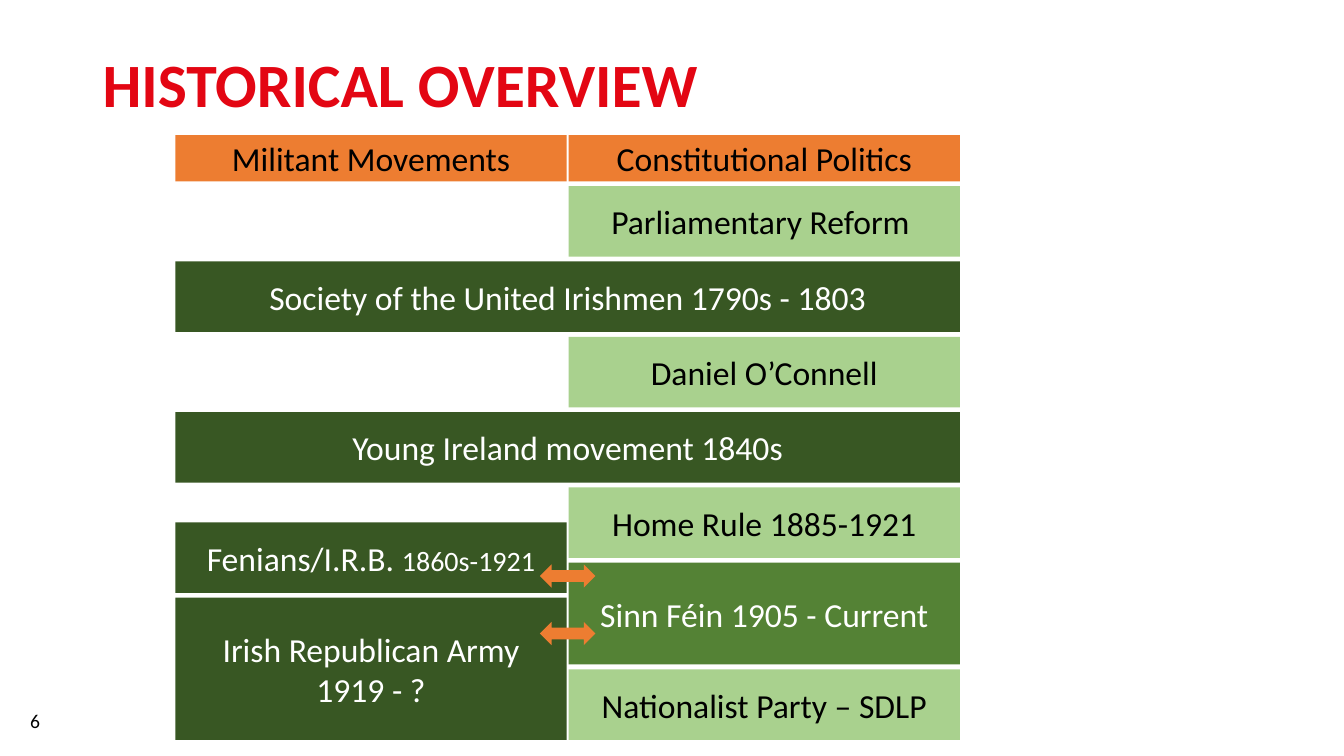
from pptx import Presentation
from pptx.dml.color import RGBColor
from pptx.enum.shapes import MSO_SHAPE
from pptx.enum.text import MSO_ANCHOR, PP_ALIGN
from pptx.util import Inches, Pt

RECTANGLE = MSO_SHAPE.RECTANGLE
DOUBLE_ARROW = MSO_SHAPE.LEFT_RIGHT_ARROW
MIDDLE = MSO_ANCHOR.MIDDLE
CENTER = PP_ALIGN.CENTER

RED = RGBColor(0xE3, 0x06, 0x13)
ORANGE = RGBColor(0xED, 0x7D, 0x31)
LIGHT_GREEN = RGBColor(0xA9, 0xD1, 0x8E)
MID_GREEN = RGBColor(0x54, 0x82, 0x35)
DARK_GREEN = RGBColor(0x38, 0x57, 0x23)
BLACK = RGBColor(0, 0, 0)
WHITE = RGBColor(255, 255, 255)

FONT = "Calibri"
COLUMN_GAP = 0.02
HEADER_HEIGHT = 0.46
BAR_HEIGHT = 0.7
SINN_FEIN_HEIGHT = 1.01
ARMY_HEIGHT = 1.41
ARROW_WIDTH, ARROW_HEIGHT = 0.55, 0.23
ARROW_OFFSETS = (4.26, 4.83)

CONSTITUTIONAL, BOTH = "constitutional", "both"
ROWS = [
    (CONSTITUTIONAL, "Constitutional Politics", HEADER_HEIGHT, ORANGE, BLACK),
    (CONSTITUTIONAL, "Parliamentary Reform ", BAR_HEIGHT, LIGHT_GREEN, BLACK),
    (BOTH, "Society of the United Irishmen 1790s - 1803", BAR_HEIGHT, DARK_GREEN, WHITE),
    (CONSTITUTIONAL, "Daniel O’Connell", BAR_HEIGHT, LIGHT_GREEN, BLACK),
    (BOTH, "Young Ireland movement 1840s", BAR_HEIGHT, DARK_GREEN, WHITE),
    (CONSTITUTIONAL, "Home Rule 1885-1921", BAR_HEIGHT, LIGHT_GREEN, BLACK),
    (CONSTITUTIONAL, "Sinn Féin 1905 - Current", SINN_FEIN_HEIGHT, MID_GREEN, WHITE),
    (CONSTITUTIONAL, "Nationalist Party – SDLP", BAR_HEIGHT, LIGHT_GREEN, BLACK),
]


def style_font(paragraph, size, color, bold=False):
    paragraph.font.name = FONT
    paragraph.font.size = Pt(size)
    paragraph.font.bold = bold
    paragraph.font.color.rgb = color


def add_label(slide, box, text, size, color, bold=False):
    shape = slide.shapes.add_textbox(*map(Inches, box))
    frame = shape.text_frame
    frame.word_wrap = True
    frame.vertical_anchor = MIDDLE
    paragraph = frame.paragraphs[0]
    paragraph.text = text
    style_font(paragraph, size, color, bold)
    return paragraph


def add_filled(slide, kind, box, fill):
    shape = slide.shapes.add_shape(kind, *map(Inches, box))
    shape.shadow.inherit = False
    shape.fill.solid()
    shape.fill.fore_color.rgb = fill
    shape.line.fill.background()
    return shape


def add_bar(slide, box, text, fill, color):
    frame = add_filled(slide, RECTANGLE, box, fill).text_frame
    frame.word_wrap = True
    frame.vertical_anchor = MIDDLE
    paragraph = frame.paragraphs[0]
    paragraph.text = text
    paragraph.alignment = CENTER
    style_font(paragraph, 24, color)
    return paragraph


def add_overview(slide, box):
    left, top, width, height = box
    column = (width - COLUMN_GAP) / 2
    right = left + column + COLUMN_GAP
    row_gap = (height - sum(row[2] for row in ROWS)) / (len(ROWS) - 1)

    add_bar(slide, (left, top, column, HEADER_HEIGHT), "Militant Movements", ORANGE, BLACK)
    row_top = top
    for span, text, row_height, fill, color in ROWS:
        x, bar_width = (left, width) if span == BOTH else (right, column)
        add_bar(slide, (x, row_top, bar_width, row_height), text, fill, color)
        row_top += row_height + row_gap

    army_top = top + height - ARMY_HEIGHT
    fenians_top = army_top - row_gap - BAR_HEIGHT
    fenians = add_bar(slide, (left, fenians_top, column, BAR_HEIGHT),
                      "Fenians/I.R.B. ", DARK_GREEN, WHITE)
    dates = fenians.add_run()
    dates.text = "1860s-1921"
    dates.font.size = Pt(20)
    add_bar(slide, (left, army_top, column, ARMY_HEIGHT),
            "Irish Republican Army 1919 - ?", DARK_GREEN, WHITE)

    arrow_left = left + (width - ARROW_WIDTH) / 2
    for offset in ARROW_OFFSETS:
        add_filled(slide, DOUBLE_ARROW,
                   (arrow_left, top + offset, ARROW_WIDTH, ARROW_HEIGHT), ORANGE)


def main():
    presentation = Presentation()
    presentation.slide_width = Inches(13.33)
    presentation.slide_height = Inches(7.5)
    slide = presentation.slides.add_slide(presentation.slide_layouts[6])
    title = add_label(slide, (0.92, 0.4, 11.5, 0.94), "HISTORICAL OVERVIEW", 44, RED, True)
    title.line_spacing = 0.9
    add_overview(slide, (1.74, 1.34, 7.78, 6))
    add_label(slide, (0.2, 6.95, 3, 0.4), "6", 14, BLACK)
    presentation.save("out.pptx")


if __name__ == "__main__":
    main()
